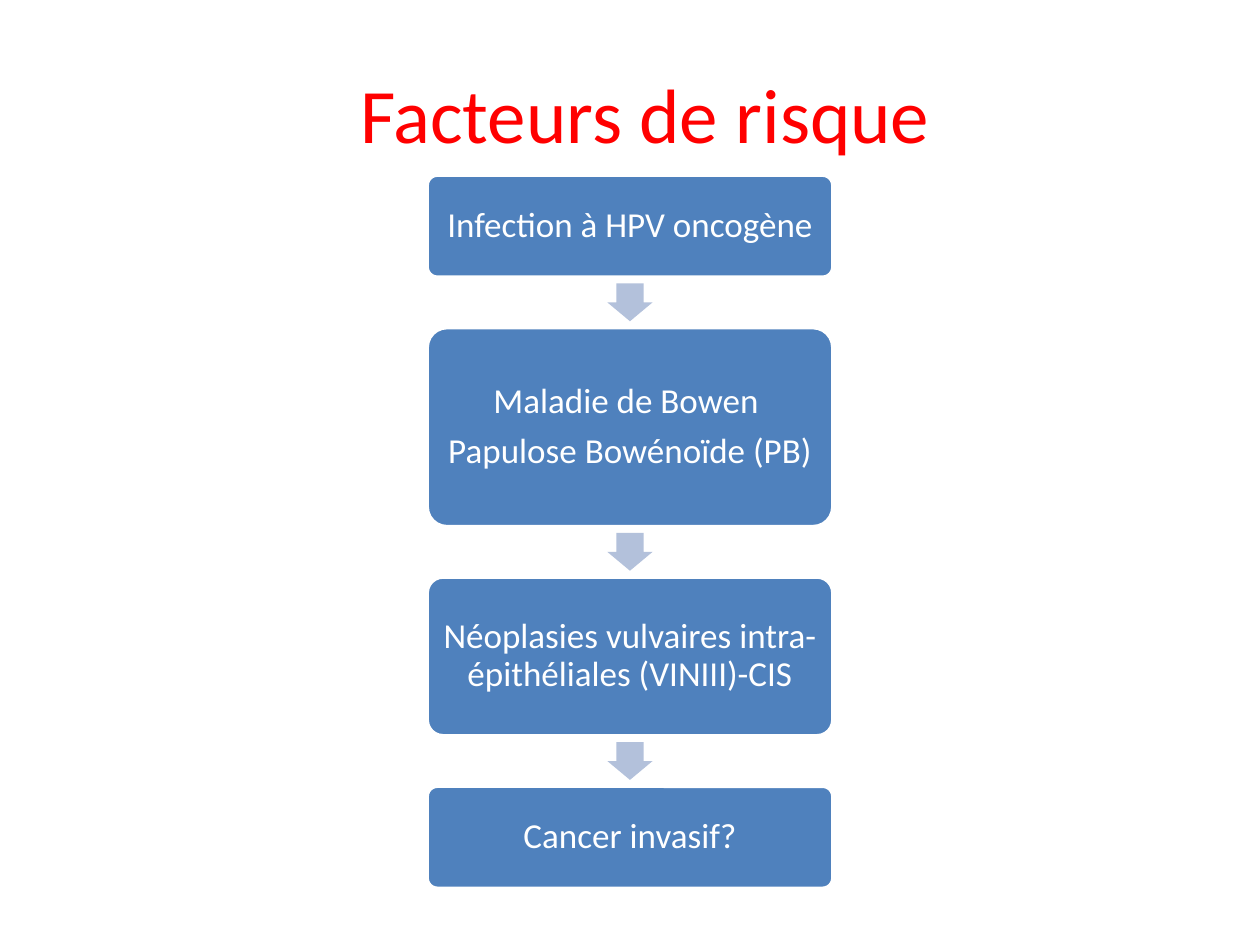
from pptx import Presentation
from pptx.dml.color import RGBColor
from pptx.enum.shapes import MSO_SHAPE as Shape
from pptx.enum.text import MSO_ANCHOR as Anchor, PP_ALIGN as Align
from pptx.util import Inches, Pt

COLORS = {"title": "FF0000", "box": "4F81BD", "arrow": "B3C1DB", "white": "FFFFFF"}
FONT = "Calibri"

BOX_LEFT, BOX_WIDTH = 3.39, 3.22
FIRST_TOP, GAP = 1.39, 0.4
ARROW_WIDTH, ARROW_HEIGHT = 0.36, 0.3
STAGES = [
    (0.81, ["Infection à HPV oncogène"]),
    (1.58, ["Maladie de Bowen ", "Papulose Bowénoïde (PB)"]),
    (1.26, ["Néoplasies vulvaires intra-épithéliales (VINIII)-CIS"]),
    (0.81, ["Cancer invasif?"]),
]


def rgb(name):
    return RGBColor.from_string(COLORS[name])


def write(tf, lines, *, size, color, inset, line_spacing=1.0, space_after=0):
    """Fill a text frame with centred paragraphs, one per line."""
    tf.word_wrap = True
    tf.vertical_anchor = Anchor.MIDDLE
    tf.margin_left = tf.margin_right = Inches(inset)
    tf.margin_top = tf.margin_bottom = Inches(inset)
    for i, line in enumerate(lines):
        p = tf.paragraphs[0] if i == 0 else tf.add_paragraph()
        p.alignment = Align.CENTER
        p.line_spacing = line_spacing
        p.space_after = Pt(space_after)
        r = p.add_run()
        r.text = line
        r.font.name = FONT
        r.font.size = Pt(size)
        r.font.color.rgb = rgb(color)


class FlowSlide:
    """Holds the slide and draws the elements of a vertical process."""

    def __init__(self, prs):
        self.slide = prs.slides.add_slide(prs.slide_layouts[6])

    def title(self, text, left, top, width, height):
        sp = self.slide.shapes.add_textbox(*map(Inches, (left, top, width, height)))
        write(sp.text_frame, [text], size=44, color="title", inset=0.1)

    def shape(self, kind, fill, left, top, width, height):
        sp = self.slide.shapes.add_shape(kind, *map(Inches, (left, top, width, height)))
        sp.shadow.inherit = False
        sp.fill.solid()
        sp.fill.fore_color.rgb = rgb(fill)
        return sp

    def box(self, lines, top, height):
        sp = self.shape(Shape.ROUNDED_RECTANGLE, "box", BOX_LEFT, top, BOX_WIDTH, height)
        sp.adjustments[0] = 0.1
        sp.line.color.rgb = rgb("white")
        sp.line.width = Pt(2)
        write(sp.text_frame, lines, size=20, color="white", inset=0.08,
              line_spacing=0.9, space_after=7)

    def arrow(self, gap_top):
        """Centre a down arrow in the gap below a box."""
        left = BOX_LEFT + (BOX_WIDTH - ARROW_WIDTH) / 2
        top = gap_top + (GAP - ARROW_HEIGHT) / 2
        sp = self.shape(Shape.DOWN_ARROW, "arrow", left, top, ARROW_WIDTH, ARROW_HEIGHT)
        sp.adjustments[0] = 0.6
        sp.adjustments[1] = 0.5
        sp.line.fill.background()


def main():
    prs = Presentation()
    prs.slide_width, prs.slide_height = Inches(10), Inches(7.5)
    s = FlowSlide(prs)
    s.title("Facteurs de risque", 0.62, 0.31, 9, 1.17)
    top = FIRST_TOP
    for i, (height, lines) in enumerate(STAGES):
        if i:
            s.arrow(top - GAP)
        s.box(lines, top, height)
        top += height + GAP
    prs.save("out.pptx")


if __name__ == "__main__":
    main()
